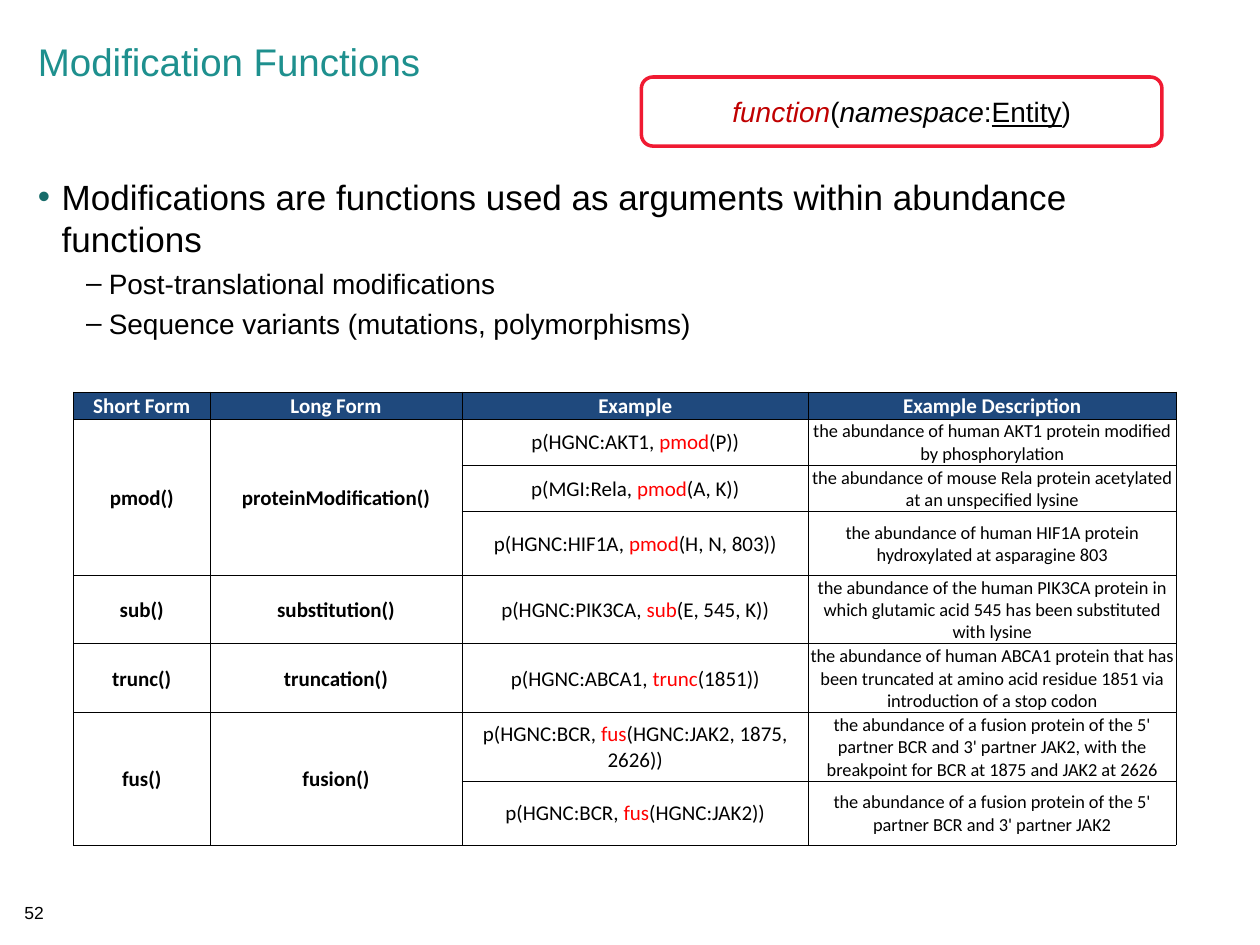
from dataclasses import dataclass

import pptx
import pptx.dml.color
import pptx.enum.shapes
import pptx.enum.text
import pptx.oxml
import pptx.oxml.ns
import pptx.util
from lxml import etree

Pt = pptx.util.Pt
RGB = pptx.dml.color.RGBColor.from_string
ALIGN = pptx.enum.text.PP_ALIGN
ANCHOR = pptx.enum.text.MSO_ANCHOR


@dataclass(frozen=True)
class Theme:
    sans: str = "Arial"
    table_font: str = "Calibri"
    ink: str = "000000"
    white: str = "FFFFFF"
    title: str = "1E908E"
    bullet: str = "176C6A"
    header: str = "1F497D"
    highlight: str = "FF0000"
    frame: str = "F01A32"
    function: str = "C00000"
    title_size: float = 22
    body_size: float = 20
    sub_size: float = 16
    cell_size: float = 12
    description_size: float = 10.5
    number_size: float = 10


THEME = Theme()

POINTS = [
    (0, "Modifications are functions used as arguments within abundance functions"),
    (1, "Post-translational modifications"),
    (1, "Sequence variants (mutations, polymorphisms)"),
]
HEADERS = ["Short Form", "Long Form", "Example", "Example Description"]
# Each function: short form, long form, [(before, after, description), ...]
FUNCTIONS = [
    ("pmod", "proteinModification", [
        ("p(HGNC:AKT1, ", "(P))",
         "the abundance of human AKT1 protein modified by phosphorylation"),
        ("p(MGI:Rela, ", "(A, K))",
         "the abundance of mouse Rela protein acetylated at an unspecified lysine"),
        ("p(HGNC:HIF1A, ", "(H, N, 803))",
         "the abundance of human HIF1A protein hydroxylated at asparagine 803"),
    ]),
    ("sub", "substitution", [
        ("p(HGNC:PIK3CA, ", "(E, 545, K))",
         "the abundance of the human PIK3CA protein in which glutamic acid 545 "
         "has been substituted with lysine"),
    ]),
    ("trunc", "truncation", [
        ("p(HGNC:ABCA1, ", "(1851))",
         "the abundance of human ABCA1 protein that has been truncated at amino acid "
         "residue 1851 via introduction of a stop codon"),
    ]),
    ("fus", "fusion", [
        ("p(HGNC:BCR, ", "(HGNC:JAK2, 1875, 2626))",
         "the abundance of a fusion protein of the 5' partner BCR and 3' partner JAK2, "
         "with the breakpoint for BCR at 1875 and JAK2 at 2626"),
        ("p(HGNC:BCR, ", "(HGNC:JAK2))",
         "the abundance of a fusion protein of the 5' partner BCR and 3' partner JAK2"),
    ]),
]
COLUMN_WIDTHS = [78, 144, 198, 210]
ROW_HEIGHTS = [15.5, 26.5, 26.5, 36.5, 39, 39.5, 39, 36.5]


def add_run(paragraph, text, size, color=THEME.ink, font=THEME.sans,
            bold=False, italic=False, underline=False):
    run = paragraph.add_run()
    run.text = text
    run.font.name = font
    run.font.size = Pt(size)
    run.font.color.rgb = RGB(color)
    run.font.bold = bold
    run.font.italic = italic
    run.font.underline = underline


def move(placeholder, box):
    placeholder.left, placeholder.top, placeholder.width, placeholder.height = map(Pt, box)
    frame = placeholder.text_frame
    frame.word_wrap = True
    frame.auto_size = pptx.enum.text.MSO_AUTO_SIZE.NONE
    frame.vertical_anchor = ANCHOR.TOP
    return frame


def fill_title(slide, box):
    paragraph = move(slide.shapes.title, box).paragraphs[0]
    paragraph.alignment = ALIGN.LEFT
    paragraph.line_spacing = 0.9
    add_run(paragraph, "Modification Functions", THEME.title_size, THEME.title)


def set_bullet(paragraph, mark, color, margin, hanging):
    properties = paragraph._p.get_or_add_pPr()
    properties.set("marL", str(Pt(margin)))
    properties.set("indent", str(-Pt(hanging)))
    bullet_color = etree.SubElement(properties, pptx.oxml.ns.qn("a:buClr"))
    etree.SubElement(bullet_color, pptx.oxml.ns.qn("a:srgbClr"), val=color)
    etree.SubElement(properties, pptx.oxml.ns.qn("a:buChar"), char=mark)


def fill_points(slide, box):
    frame = move(slide.placeholders[1], box)
    frame.margin_top = Pt(6)
    for index, (level, text) in enumerate(POINTS):
        point = frame.add_paragraph() if index else frame.paragraphs[0]
        point.level = level
        if level:
            set_bullet(point, "–", THEME.ink, 40.5, 13)
        else:
            set_bullet(point, "•", THEME.bullet, 13.5, 13.5)
        point.alignment = ALIGN.LEFT
        point.space_before = Pt(3.7 if index else 0)
        add_run(point, text, THEME.sub_size if level else THEME.body_size)


def add_syntax_box(slide, box):
    syntax = slide.shapes.add_shape(
        pptx.enum.shapes.MSO_SHAPE.ROUNDED_RECTANGLE, *map(Pt, box))
    syntax.shadow.inherit = False
    syntax.fill.solid()
    syntax.fill.fore_color.rgb = RGB(THEME.white)
    syntax.line.color.rgb = RGB(THEME.frame)
    syntax.line.width = Pt(2)
    syntax.text_frame.vertical_anchor = ANCHOR.MIDDLE
    paragraph = syntax.text_frame.paragraphs[0]
    paragraph.alignment = ALIGN.CENTER
    size = THEME.sub_size
    add_run(paragraph, "function", size, THEME.function, italic=True)
    add_run(paragraph, "(", size)
    add_run(paragraph, "namespace", size, italic=True)
    add_run(paragraph, ":", size)
    add_run(paragraph, "Entity", size, underline=True)
    add_run(paragraph, ")", size)


def style_cell(cell, fill=None):
    cell.vertical_anchor = ANCHOR.MIDDLE
    cell.margin_left = cell.margin_right = cell.margin_top = Pt(0.7)
    cell.margin_bottom = 0
    for side in ("lnL", "lnR", "lnT", "lnB"):
        cell._tc.get_or_add_tcPr().append(pptx.oxml.parse_xml(
            f'<a:{side} {pptx.oxml.ns.nsdecls("a")} w="{Pt(0.5)}"><a:solidFill>'
            f'<a:srgbClr val="{THEME.ink}"/></a:solidFill></a:{side}>'))
    if fill:
        cell.fill.solid()
        cell.fill.fore_color.rgb = RGB(fill)
    else:
        cell.fill.background()


def write_cell(cell, *parts, size=THEME.cell_size, bold=False):
    """Write (text, colour) parts as the runs of one centred paragraph."""
    paragraph = cell.text_frame.paragraphs[0]
    paragraph.alignment = ALIGN.CENTER
    for text, color in parts:
        add_run(paragraph, text, size, color, THEME.table_font, bold)


def add_function_table(slide, left, top):
    table = slide.shapes.add_table(
        len(ROW_HEIGHTS), len(COLUMN_WIDTHS), Pt(left), Pt(top),
        Pt(sum(COLUMN_WIDTHS)), Pt(sum(ROW_HEIGHTS))).table
    for column, width in zip(table.columns, COLUMN_WIDTHS):
        column.width = Pt(width)
    for index, (row, height) in enumerate(zip(table.rows, ROW_HEIGHTS)):
        row.height = Pt(height)
        for cell in row.cells:
            style_cell(cell, None if index else THEME.header)
    for column, header in enumerate(HEADERS):
        write_cell(table.cell(0, column), (header, THEME.white), bold=True)
    first = 1
    for short, long, examples in FUNCTIONS:
        last = first + len(examples) - 1
        for column, name in enumerate((short, long)):
            if last > first:
                table.cell(first, column).merge(table.cell(last, column))
            write_cell(table.cell(first, column), (name + "()", THEME.ink), bold=True)
        for row, (before, after, description) in enumerate(examples, first):
            write_cell(table.cell(row, 2), (before, THEME.ink),
                       (short, THEME.highlight), (after, THEME.ink))
            write_cell(table.cell(row, 3), (description, THEME.ink),
                       size=THEME.description_size)
        first = last + 1


def add_page_number(slide, box):
    frame = slide.shapes.add_textbox(*map(Pt, box)).text_frame
    frame.word_wrap = True
    frame.paragraphs[0].alignment = ALIGN.CENTER
    add_run(frame.paragraphs[0], "52", THEME.number_size)


def main():
    deck = pptx.Presentation()
    deck.slide_width, deck.slide_height = Pt(720), Pt(540)
    slide = deck.slides.add_slide(deck.slide_layouts[1])
    fill_title(slide, (14.5, 21, 606, 65))
    fill_points(slide, (14.5, 94.5, 684, 402.5))
    add_function_table(slide, 42, 224)
    add_syntax_box(slide, (366.5, 44, 297.5, 39.5))
    add_page_number(slide, (4.5, 512, 30, 19.5))
    deck.save("out.pptx")


if __name__ == "__main__":
    main()
